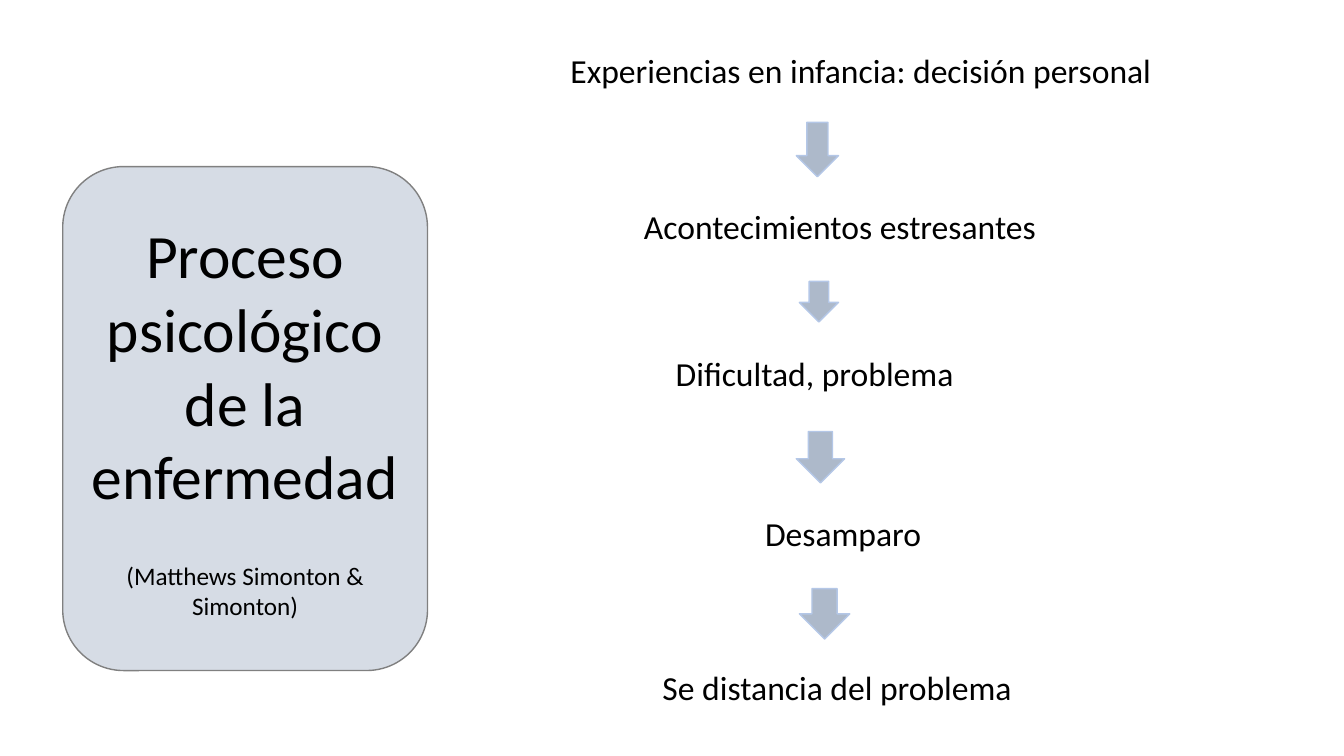
from dataclasses import dataclass
from pptx import Presentation
from pptx.dml.color import RGBColor
from pptx.enum.shapes import MSO_SHAPE
from pptx.enum.text import MSO_ANCHOR, PP_ALIGN
from pptx.util import Pt

ROUND = MSO_SHAPE.ROUNDED_RECTANGLE
DOWN = MSO_SHAPE.DOWN_ARROW
MIDDLE = MSO_ANCHOR.MIDDLE
LEFT, CENTER = PP_ALIGN.LEFT, PP_ALIGN.CENTER


@dataclass
class Theme:
    font: str = "Calibri"
    ink: str = "000000"
    panel: str = "D6DCE5"
    edge: str = "808080"
    arrow: str = "ADB9CA"
    rim: str = "B4C7E7"
    title: int = 44
    step: int = 24
    credit: int = 18


theme = Theme()


def write(para, text, size, align):
    para.alignment = align
    run = para.add_run()
    run.text = text
    look = {"name": theme.font, "size": Pt(size)}
    for key, value in look.items():
        setattr(run.font, key, value)
    run.font.color.rgb = RGBColor.from_string(theme.ink)


def draw(kind, box, fill, line):
    shape = slide.shapes.add_shape(kind, *map(Pt, box))
    shape.shadow.inherit = False
    shape.fill.solid()
    shape.fill.fore_color.rgb = RGBColor.from_string(fill)
    shape.line.color.rgb = RGBColor.from_string(line)
    shape.line.width = Pt(1)
    return shape


deck = Presentation()
deck.slide_width, deck.slide_height = Pt(960), Pt(540)
slide = deck.slides.add_slide(deck.slide_layouts[6])

steps = [
    ("Experiencias en infancia: decisión personal", 383.8, 32.4, 462.2, CENTER),
    ("Acontecimientos estresantes", 452.9, 143.3, 299.5, LEFT),
    ("Dificultad, problema", 460.6, 248.4, 242.6, CENTER),
    ("Desamparo", 397.4, 362.9, 409.7, CENTER),
    ("Se distancia del problema", 460.1, 473, 275.8, CENTER),
]
for text, left, top, width, align in steps:
    box = slide.shapes.add_textbox(Pt(left), Pt(top), Pt(width), Pt(36.5))
    box.text_frame.word_wrap = True
    write(box.text_frame.paragraphs[0], text, theme.step, align)

panel = draw(ROUND, (44.8, 119, 260.6, 360), theme.panel, theme.edge)
frame = panel.text_frame
for key, value in {"word_wrap": True, "vertical_anchor": MIDDLE}.items():
    setattr(frame, key, value)
write(frame.paragraphs[0], "Proceso psicológico de la enfermedad", theme.title, CENTER)
credit = frame.add_paragraph()
credit.space_before = Pt(34)
write(credit, "(Matthews Simonton & Simonton)", theme.credit, CENTER)

arrows = [
    (568.8, 87.4, 30.2, 38.9),
    (571, 201, 28, 29),
    (568.8, 308.2, 34.5, 36.7),
    (571, 420.5, 36, 36),
]
for box in arrows:
    draw(DOWN, box, theme.arrow, theme.rim)

deck.save("out.pptx")
